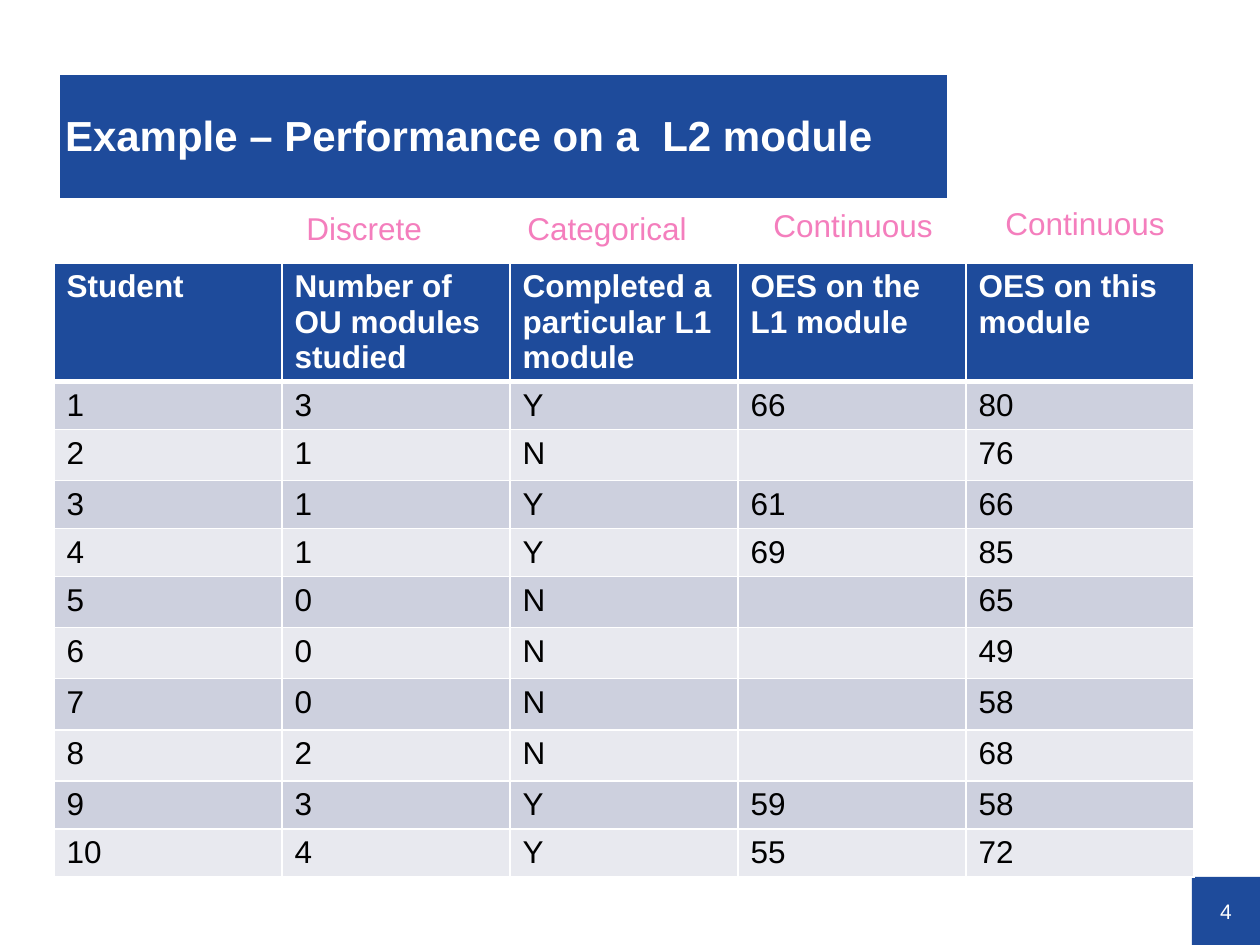
from lxml import etree
from pptx import Presentation
from pptx.dml.color import RGBColor
from pptx.enum.shapes import MSO_SHAPE
from pptx.enum.text import MSO_ANCHOR, MSO_AUTO_SIZE, PP_ALIGN
from pptx.oxml.ns import qn
from pptx.util import Pt

RECTANGLE = MSO_SHAPE.RECTANGLE
MIDDLE = MSO_ANCHOR.MIDDLE
LEFT, CENTER = PP_ALIGN.LEFT, PP_ALIGN.CENTER
NO_AUTOFIT, FIT_SHAPE = MSO_AUTO_SIZE.NONE, MSO_AUTO_SIZE.SHAPE_TO_FIT_TEXT

BLUE = RGBColor(0x1E, 0x4B, 0x9B)
PINK = RGBColor(0xF4, 0x7E, 0xBD)
DARK_BAND = RGBColor(0xCD, 0xD0, 0xDE)
LIGHT_BAND = RGBColor(0xE8, 0xE9, 0xEF)
WHITE = RGBColor(0xFF, 0xFF, 0xFF)
BLACK = RGBColor(0x00, 0x00, 0x00)

EMU_PER_PX = 914400 // 126
TITLE_ONLY = 5

HEADINGS = ("Student", "Number of OU modules studied",
            "Completed a particular L1 module",
            "OES on the L1 module", "OES on this module")
STUDENTS = (
    (1, 3, "Y", 66, 80),
    (2, 1, "N", "", 76),
    (3, 1, "Y", 61, 66),
    (4, 1, "Y", 69, 85),
    (5, 0, "N", "", 65),
    (6, 0, "N", "", 49),
    (7, 0, "N", "", 58),
    (8, 2, "N", "", 68),
    (9, 3, "Y", 59, 58),
    (10, 4, "Y", 55, 72),
)
VARIABLE_TYPES = (
    ("Discrete", 294, 203, 142),
    ("Categorical", 515, 203, 186),
    ("Continuous", 761, 200, 186),
    ("Continuous", 993, 198, 186),
)


def px(*lengths):
    return [length * EMU_PER_PX for length in lengths]


class SlideBuilder:
    """Holds the text style and the current slide, and adds elements to it."""

    font_name = "Arial"

    def __init__(self, slide):
        self.slide = slide

    def add_text(self, frame, text, size, color, bold=False, **para_format):
        para = frame.paragraphs[0]
        for name, value in para_format.items():
            setattr(para, name, value)
        span = para.add_run()
        span.text = text
        span.font.color.rgb = color
        style = {"name": self.font_name, "size": Pt(size), "bold": bold}
        for name, value in style.items():
            setattr(span.font, name, value)

    def set_frame(self, frame, insets=None, **frame_format):
        if insets:
            sides = ("left", "top", "right", "bottom")
            for side, inset in zip(sides, px(*insets)):
                frame_format[f"margin_{side}"] = inset
        for name, value in frame_format.items():
            setattr(frame, name, value)

    def title(self, text, left, top, width, height):
        box = self.slide.shapes.title
        place = dict(zip(("left", "top", "width", "height"),
                         px(left, top, width, height)))
        for name, value in place.items():
            setattr(box, name, value)
        box.fill.solid()
        box.fill.fore_color.rgb = BLUE
        self.set_frame(box.text_frame, (5, 3, 0, 0), word_wrap=True,
                       auto_size=NO_AUTOFIT, vertical_anchor=MIDDLE)
        self.add_text(box.text_frame, text, 24, WHITE, True,
                      alignment=LEFT, line_spacing=0.9)

    def page_number(self, text, left, top, side):
        box = self.slide.shapes.add_shape(RECTANGLE, *px(left, top, side, side))
        box.shadow.inherit = False
        box.fill.solid()
        box.fill.fore_color.rgb = BLUE
        box.line.fill.background()
        self.set_frame(box.text_frame, (0, 0, 0, 0), vertical_anchor=MIDDLE)
        self.add_text(box.text_frame, text, 12, WHITE, alignment=CENTER)

    def label(self, text, left, top, width, height=50):
        box = self.slide.shapes.add_textbox(*px(left, top, width, height))
        self.set_frame(box.text_frame, word_wrap=False, auto_size=FIT_SHAPE)
        self.add_text(box.text_frame, text, 18, PINK)

    def borders(self, cell, top, bottom):
        properties = cell._tc.get_or_add_tcPr()
        for side, width in zip("LRTB", (1, 1, top, bottom)):
            line = etree.SubElement(properties, qn(f"a:ln{side}"), w=str(Pt(width)))
            fill = etree.SubElement(line, qn("a:solidFill"))
            etree.SubElement(fill, qn("a:srgbClr"), val=str(WHITE))

    def table(self, rows, left, top, column_width, header_height, row_height):
        columns = len(rows[0])
        width = column_width * columns
        height = header_height + row_height * (len(rows) - 1)
        table = self.slide.shapes.add_table(
            len(rows), columns, *px(left, top, width, height)).table
        for column in table.columns:
            column.width = column_width * EMU_PER_PX
        for index, values in enumerate(rows):
            header = index == 0
            band = DARK_BAND if index % 2 else LIGHT_BAND
            row = table.rows[index]
            row.height = (header_height if header else row_height) * EMU_PER_PX
            for cell, value in zip(row.cells, values):
                self.borders(cell, 3 if index == 1 else 1, 3 if header else 1)
                cell.fill.solid()
                cell.fill.fore_color.rgb = BLUE if header else band
                if value != "":
                    self.add_text(cell.text_frame, str(value), 18,
                                  WHITE if header else BLACK, header)


def main():
    deck = Presentation()
    deck.slide_width, deck.slide_height = px(1260, 945)
    page = SlideBuilder(deck.slides.add_slide(deck.slide_layouts[TITLE_ONLY]))
    page.page_number("4", 1192, 877, 68)
    page.title("Example – Performance on a  L2 module", 60, 75, 887, 123)
    page.table((HEADINGS, *STUDENTS), 54, 263, 228, 117, 48)
    for variable_type in VARIABLE_TYPES:
        page.label(*variable_type)
    deck.save("out.pptx")


if __name__ == "__main__":
    main()
